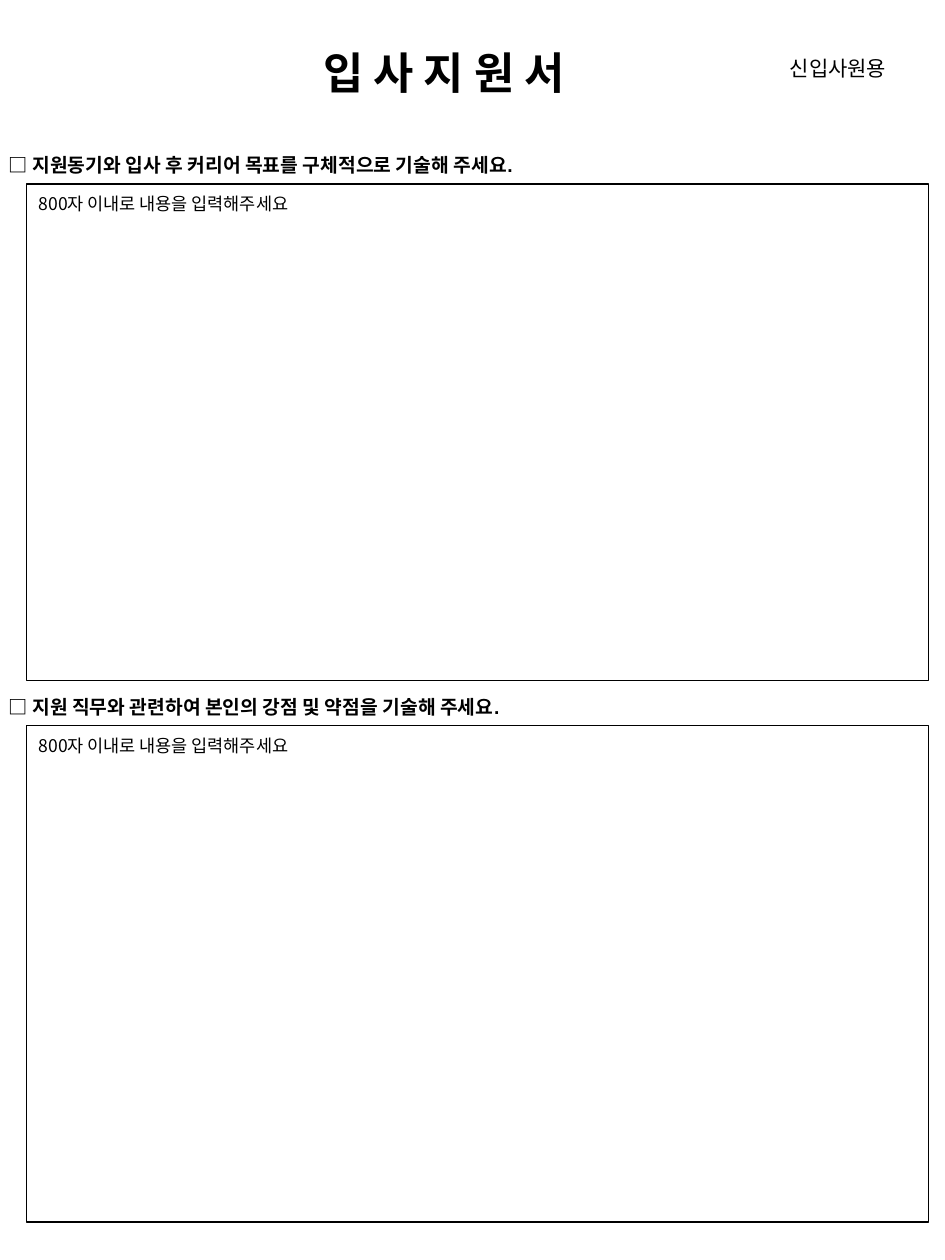
import pptx
import pptx.util
import pptx.dml.color
import pptx.enum.shapes
import pptx.enum.text

Inches = pptx.util.Inches
Pt = pptx.util.Pt
ANCHOR = pptx.enum.text.MSO_ANCHOR
COLORS = {"ink": "000000", "paper": "FFFFFF"}
HINT = "800자 이내로 내용을 입력해주세요"
ASKS = [
    "□ 지원동기와 입사 후 커리어 목표를 구체적으로 기술해 주세요.",
    "□ 지원 직무와 관련하여 본인의 강점 및 약점을 기술해 주세요.",
]
TOP, STEP = 1.17, 4.3


def color(name):
    return pptx.dml.color.RGBColor.from_string(COLORS[name])


def style(para, size, face="Arial", bold=False):
    for run in para.runs:
        run.font.size = Pt(size)
        run.font.name = face
        run.font.bold = bold
        run.font.color.rgb = color("ink")


def add_text(shapes, text, area, size, bold=False, wrap=False,
             anchor=ANCHOR.MIDDLE):
    box = shapes.add_textbox(*map(Inches, area))
    frame = box.text_frame
    frame.word_wrap = wrap
    frame.auto_size = pptx.enum.text.MSO_AUTO_SIZE.SHAPE_TO_FIT_TEXT
    frame.vertical_anchor = anchor
    frame.text = text
    style(frame.paragraphs[0], size, bold=bold)
    return box


def add_field(shapes, area):
    rect = shapes.add_shape(
        pptx.enum.shapes.MSO_SHAPE.RECTANGLE, *map(Inches, area))
    rect.shadow.inherit = False
    rect.fill.solid()
    rect.fill.fore_color.rgb = color("paper")
    rect.line.color.rgb = color("ink")
    rect.line.width = Pt(0.75)
    frame = rect.text_frame
    frame.word_wrap = True
    frame.vertical_anchor = ANCHOR.TOP
    frame.text = HINT
    para = frame.paragraphs[0]
    para.alignment = pptx.enum.text.PP_ALIGN.JUSTIFY
    para.line_spacing = 1.15
    para.space_after = Pt(10)
    style(para, 10, "Noto Sans CJK KR")


def add_part(slide, ask, top):
    group = slide.shapes.add_group_shape()
    add_text(group.shapes, ask, (-0.03, top, 5.59, 0.29), 11,
             bold=True, wrap=True, anchor=ANCHOR.TOP)
    add_field(group.shapes, (0.21, top + 0.29, 7.16, 3.94))


def main():
    deck = pptx.Presentation()
    deck.slide_width, deck.slide_height = Inches(7.5), Inches(10)
    slide = deck.slides.add_slide(deck.slide_layouts[6])

    # Heading, set in from the left of its box
    title = add_text(slide.shapes, "입 사 지 원 서",
                     (2.33, 0.31, 2.87, 0.52), 25, bold=True)
    title.text_frame.margin_left = Inches(0.24)
    add_text(slide.shapes, "신입사원용", (6.17, 0.39, 1.04, 0.3), 12)

    # Questions with answer fields
    for i, ask in enumerate(ASKS):
        add_part(slide, ask, TOP + i * STEP)

    deck.save("out.pptx")


if __name__ == "__main__":
    main()
